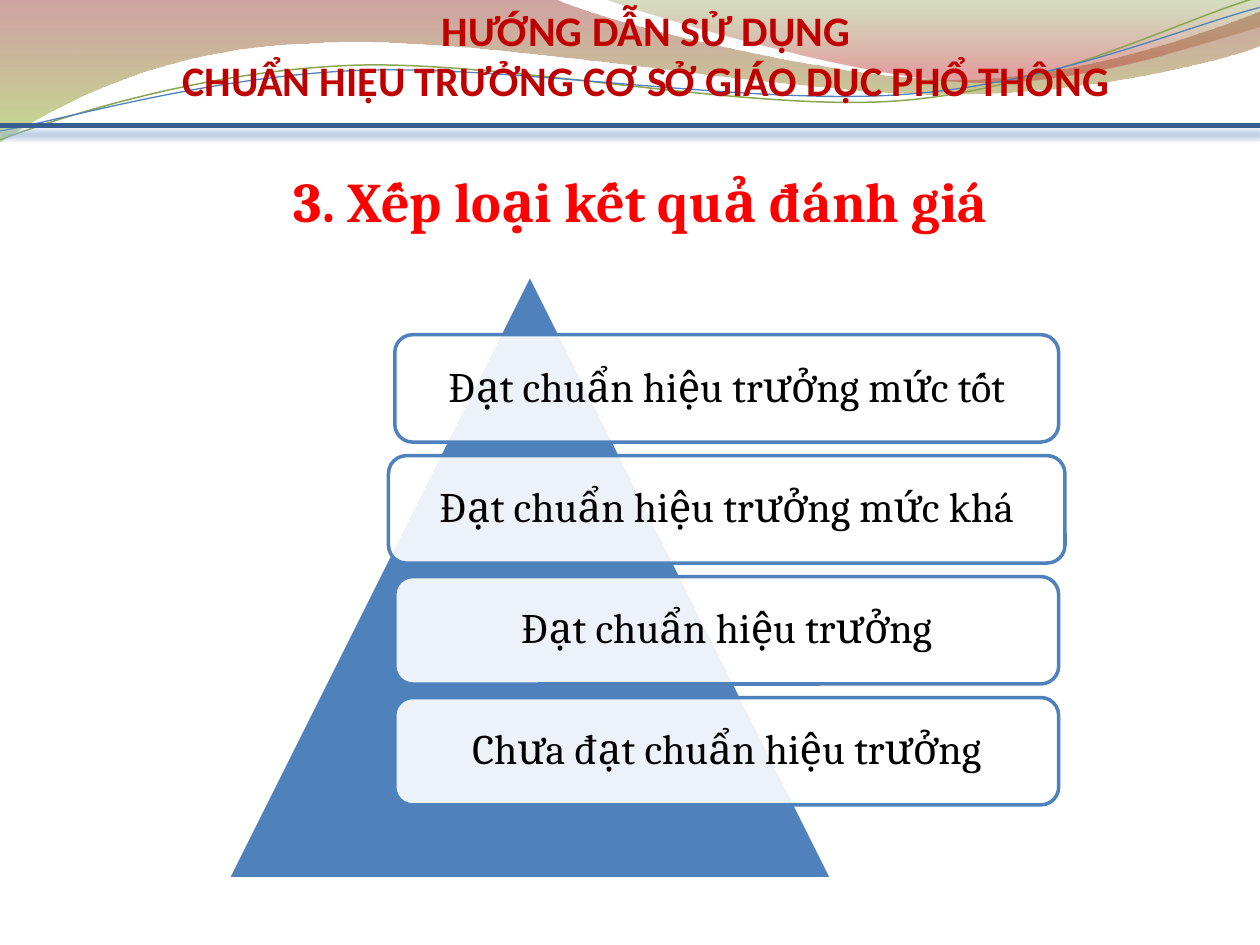
from math import cos, radians, sin

from lxml import etree
from pptx import Presentation
from pptx.dml.color import RGBColor
from pptx.enum.shapes import MSO_CONNECTOR, MSO_SHAPE
from pptx.enum.text import MSO_ANCHOR, MSO_AUTO_SIZE, PP_ALIGN
from pptx.oxml.ns import qn
from pptx.util import Pt

STRAIGHT = MSO_CONNECTOR.STRAIGHT
TRIANGLE, ROUNDED = MSO_SHAPE.ISOSCELES_TRIANGLE, MSO_SHAPE.ROUNDED_RECTANGLE
MIDDLE, BOTTOM = MSO_ANCHOR.MIDDLE, MSO_ANCHOR.BOTTOM
CENTER, NO_FIT = PP_ALIGN.CENTER, MSO_AUTO_SIZE.NONE

COLORS = {
    "white": "FFFFFF", "black": "000000", "blue": "4F81BD", "rule": "376092",
    "rule_shadow": "95B3D7", "title": "C00000", "heading": "FF0000",
    "green_line": "89A54F", "wave_red": "973330", "wave_lime": "95C238",
    "wave_green": "769537", "wave_rose": "BE3330",
}

# Outlines: a pair is a straight step, six numbers are a cubic curve.
BROAD_WAVE = [
    (0, 0), (316.8, -0.7),
    (342.7, 12.2, 478.1, 45.4, 545.8, 45.4), (614.2, 45.4, 689.8, 18.7, 720, 6.5),
    (720.7, 25.9),
    (707.8, 31.7, 626.4, 54.7, 537.1, 54), (447.8, 54, 275, 20.2, 185, 24.5),
    (92.9, 25.9, 33.1, 59.8, -0.7, 81.4), (0, 0),
]
RIGHT_WAVE = [
    (344.9, -0.7),
    (366.5, 7.9, 491, 44.6, 553.7, 46.8), (616.3, 49.7, 691.9, 23, 720, 15.1),
    (720, 0), (344.9, -0.7),
]
GREEN_STRAND = [
    (0, 79.9),
    (34.6, 67, 113.8, 41, 199.4, 37.4), (284.4, 33.8, 427, 64.1, 513.4, 57.6),
    (599.8, 51.1, 675.4, 10.8, 718.6, -1.4),
]
BLUE_STRAND = [
    (0, 74.9),
    (33.8, 69.1, 118.1, 43.9, 203.8, 40.3), (290.2, 36.7, 429.8, 60.5, 516.2, 54),
    (601.9, 48.2, 677.5, 15.1, 720, 4.3),
]
STRAND_TILT = -2.7

LEVELS = [
    ("Đạt chuẩn hiệu trưởng mức tốt", 379.4),
    ("Đạt chuẩn hiệu trưởng mức khá", 386.6),
    ("Đạt chuẩn hiệu trưởng", 379.4),
    ("Chưa đạt chuẩn hiệu trưởng", 379.4),
]


def rgb(name):
    return RGBColor.from_string(COLORS[name])


def set_alpha(color_parent, percent):
    """Make the colour held by a fill element partly opaque."""
    etree.SubElement(color_parent[0], qn("a:alpha"), val=str(percent * 1000))


def set_line(shape, color, width):
    shape.line.color.rgb = rgb(color)
    shape.line.width = Pt(width)


def format_text(frame, text, font, size, color, bold=False, anchor=MIDDLE):
    frame.word_wrap = True
    frame.auto_size = NO_FIT
    frame.vertical_anchor = anchor
    para = frame.paragraphs[0]
    para.text = text
    para.alignment = CENTER
    for span in para.runs:
        span.font.name, span.font.size, span.font.bold = font, Pt(size), bold
        span.font.color.rgb = rgb(color)
    return para


def level_out(points, tilt):
    """Turn points back by the tilt around the middle of their ends."""
    (x1, y1), (x2, y2) = points[0], points[-1]
    mid_x, mid_y = (x1 + x2) / 2, (y1 + y2) / 2
    c, s = cos(radians(-tilt)), sin(radians(-tilt))
    return [(mid_x + (x - mid_x) * c - (y - mid_y) * s,
             mid_y + (x - mid_x) * s + (y - mid_y) * c) for x, y in points]


def bend(shape, steps):
    """Join each three segments that stand for a curve into one cubic."""
    segments = iter(list(shape._element.iter(qn("a:lnTo"))))
    for step in steps:
        first = next(segments)
        if len(step) == 6:
            first.tag = qn("a:cubicBezTo")
            for _ in range(2):
                extra = next(segments)
                first.append(extra[0])
                extra.getparent().remove(extra)


def add_outline(page, outline, left, top, close, tilt=0):
    points = [step[i:i + 2] for step in outline for i in range(0, len(step), 2)]
    points = [(Pt(left + x), Pt(top + y)) for x, y in level_out(points, tilt)]
    builder = page.shapes.build_freeform(*points[0])
    builder.add_line_segments(points[1:], close=close)
    shape = builder.convert_to_shape()
    bend(shape, outline[1:])
    shape.rotation = tilt
    shape.shadow.inherit = False
    return shape


def add_wave(page, outline, left, top, stops):
    wave = add_outline(page, outline, left, top, True)
    wave.line.fill.background()
    wave.fill.gradient()
    wave.fill.gradient_angle = 270
    elements = wave._element.spPr.iter(qn("a:gs"))
    for stop, element, (position, color, alpha) in zip(
            wave.fill.gradient_stops, elements, stops):
        stop.position = position
        stop.color.rgb = rgb(color)
        set_alpha(element, alpha)


def add_banner(page, left, top):
    add_wave(page, BROAD_WAVE, left, top, [(0, "wave_red", 45), (1, "wave_lime", 55)])
    add_wave(page, RIGHT_WAVE, left, top, [(0, "wave_green", 30), (0.8, "wave_rose", 45)])
    for outline, color, width in ((GREEN_STRAND, "green_line", 0.85),
                                  (BLUE_STRAND, "blue", 0.75)):
        strand = add_outline(page, outline, left, top, False, STRAND_TILT)
        strand.fill.background()
        set_line(strand, color, width)


def place_title(page, left, top, width, height):
    title = page.shapes.title
    title.left, title.top, title.width, title.height = map(Pt, (left, top, width, height))
    frame = title.text_frame
    frame.margin_left = frame.margin_right = frame.margin_bottom = 0
    frame.margin_top = Pt(3.6)
    format_text(frame, "HƯỚNG DẪN SỬ DỤNG\nCHUẨN HIỆU TRƯỞNG CƠ SỞ GIÁO DỤC PHỔ THÔNG",
                "Calibri", 24, "title", True, BOTTOM)
    page.shapes._spTree.append(title._element)  # in front of the banner


def add_rule(page, left, top, width):
    rule = page.shapes.add_connector(STRAIGHT, Pt(left), Pt(top), Pt(left + width), Pt(top))
    set_line(rule, "rule", 3)
    effects = etree.SubElement(rule._element.spPr, qn("a:effectLst"))
    shadow = etree.SubElement(effects, qn("a:outerShdw"), blurRad=str(Pt(4)),
                              dist=str(Pt(4)), dir="5400000")
    etree.SubElement(shadow, qn("a:srgbClr"), val=COLORS["rule_shadow"])


def add_heading(page, left, top, width, height):
    box = page.shapes.add_textbox(*map(Pt, (left, top, width, height)))
    para = format_text(box.text_frame, "3. Xếp loại kết quả đánh giá",
                       "Cambria", 32, "heading", True)
    para._p.get_or_add_pPr().set("marL", str(Pt(6.5)))


def add_pyramid(page, left, top, size):
    """Draw a triangle with a column of labels over its right half."""
    triangle = page.shapes.add_shape(TRIANGLE, Pt(left), Pt(top), Pt(size), Pt(size))
    triangle.shadow.inherit = False
    triangle.fill.solid()
    triangle.fill.fore_color.rgb = rgb("blue")
    set_line(triangle, "white", 2)

    middle, height, pitch = left + 285.3, 61.4, size / 5
    for row, (text, width) in enumerate(LEVELS):
        label = page.shapes.add_shape(ROUNDED, Pt(middle - width / 2),
                                      Pt(top + size / 10 + row * pitch),
                                      Pt(width), Pt(height))
        label.shadow.inherit = False
        label.fill.solid()
        label.fill.fore_color.rgb = rgb("white")
        set_alpha(label._element.spPr.find(qn("a:solidFill")), 90)
        set_line(label, "blue", 2)
        para = format_text(label.text_frame, text, "Cambria", 24, "black")
        para.line_spacing = 0.9


def main():
    deck = Presentation()
    deck.slide_width, deck.slide_height = Pt(720), Pt(540)
    page = deck.slides.add_slide(deck.slide_layouts[5])
    add_banner(page, 0, 0)
    add_heading(page, 65.5, 88.8, 594.7, 51.1)
    place_title(page, 83.5, -2.5, 571, 62.6)
    add_rule(page, 0, 71.6, 720)
    add_pyramid(page, 130, 156.7, 345.6)
    deck.save("out.pptx")


if __name__ == "__main__":
    main()
